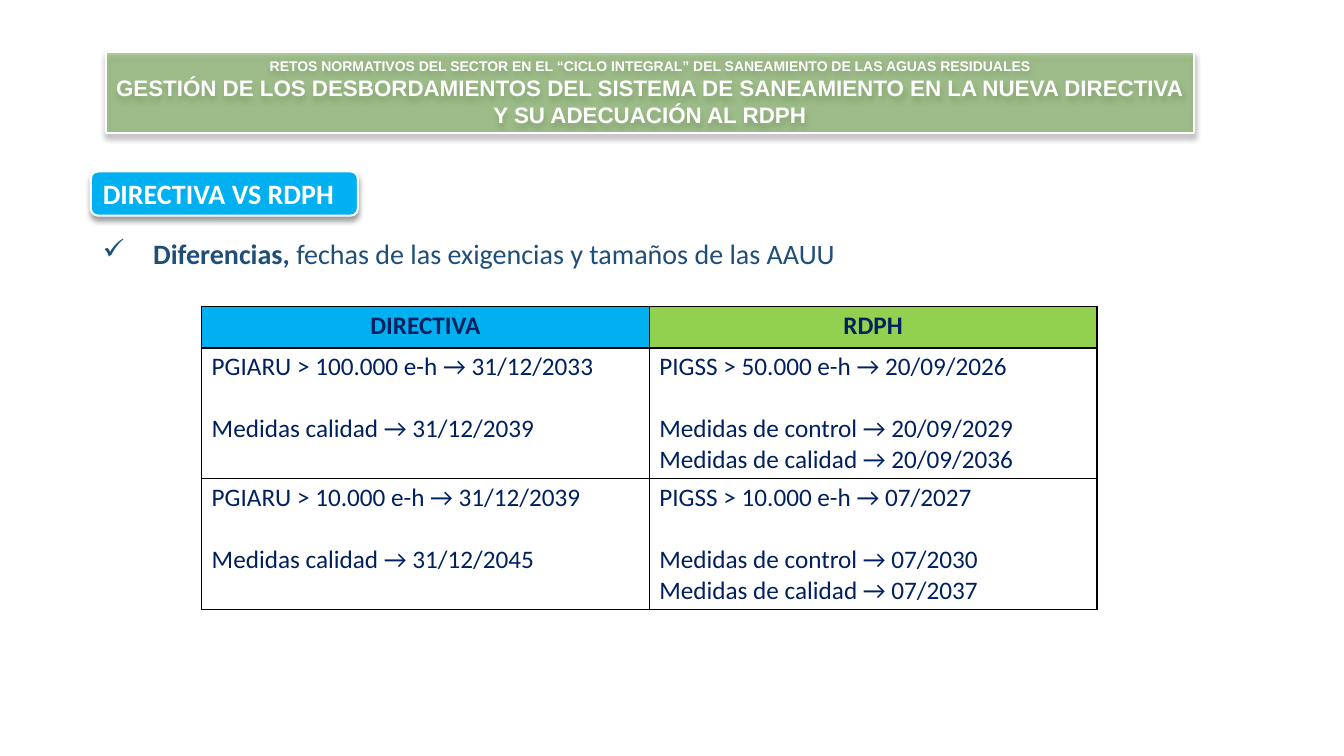
from lxml import etree
from pptx import Presentation
from pptx.dml.color import RGBColor
from pptx.enum.shapes import MSO_SHAPE as SHAPE
from pptx.enum.text import MSO_ANCHOR as ANCHOR, MSO_AUTO_SIZE as AUTO, PP_ALIGN as ALIGN
from pptx.oxml import parse_xml
from pptx.oxml.ns import nsdecls, qn
from pptx.util import Inches, Pt

WHITE = RGBColor(0xFF, 0xFF, 0xFF)
BLUE = RGBColor(0x00, 0xB0, 0xF0)
GREEN = RGBColor(0x70, 0xAD, 0x47)
LIME = RGBColor(0x92, 0xD0, 0x50)
STEEL = RGBColor(0x1F, 0x4E, 0x79)
NAVY = RGBColor(0x00, 0x20, 0x60)
LINE_GAP = Pt(22)  # one line of 18 pt text


class Deck:
    """Slide in progress with its shared style."""

    font = "Calibri"

    def __init__(self):
        self.prs = Presentation()
        self.prs.slide_width, self.prs.slide_height = Inches(13.33), Inches(7.5)
        self.s = self.prs.slides.add_slide(self.prs.slide_layouts[5])

    def run(self, p, text, size, color, bold=False, font=None):
        r = p.add_run()
        r.text = text
        r.font.name, r.font.size, r.font.bold = font or self.font, Pt(size), bold
        r.font.color.rgb = color

    def panel(self, sp, fill, alpha=100):
        """Fill, white outline and soft shadow of a rounded panel."""
        sp.fill.solid()
        sp.fill.fore_color.rgb = fill
        if alpha < 100:
            color = sp.element.spPr.find(qn("a:solidFill"))[0]
            etree.SubElement(color, qn("a:alpha"), val=str(alpha * 1000))
        sp.line.color.rgb, sp.line.width = WHITE, Pt(1.5)
        sp.shadow.inherit = False
        sp.element.spPr.find(qn("a:effectLst")).append(parse_xml(
            f'<a:outerShdw {nsdecls("a")} blurRad="{Pt(4)}" dist="{Pt(3)}" dir="5400000"'
            ' rotWithShape="0"><a:srgbClr val="000000"><a:alpha val="40000"/>'
            '</a:srgbClr></a:outerShdw>'))
        sp.text_frame.vertical_anchor = ANCHOR.MIDDLE

    def title(self, x, y, w, h, lines):
        sp = self.s.shapes.title
        sp.left, sp.top, sp.width, sp.height = map(Inches, (x, y, w, h))
        sp.element.spPr.insert(1, parse_xml(
            f'<a:prstGeom {nsdecls("a")} prst="roundRect"><a:avLst/></a:prstGeom>'))
        self.panel(sp, GREEN, 50)
        tf = sp.text_frame
        tf.word_wrap, tf.auto_size = True, AUTO.NONE
        for i, (text, size) in enumerate(lines):
            p = tf.add_paragraph() if i else tf.paragraphs[0]
            p.alignment = ALIGN.CENTER
            self.run(p, text, size, WHITE, True, "Arial")

    def label(self, x, y, w, h, text):
        sp = self.s.shapes.add_shape(SHAPE.ROUNDED_RECTANGLE, *map(Inches, (x, y, w, h)))
        self.panel(sp, BLUE)
        p = sp.text_frame.paragraphs[0]
        p.alignment = ALIGN.LEFT
        self.run(p, text, 20, WHITE, True)

    def bullet(self, x, y, w, h, runs):
        tf = self.s.shapes.add_textbox(*map(Inches, (x, y, w, h))).text_frame
        tf.word_wrap = True
        p = tf.paragraphs[0]
        pPr = p._p.get_or_add_pPr()
        pPr.set("marL", str(Inches(0.5)))
        pPr.set("indent", str(-Inches(0.5)))
        etree.SubElement(pPr, qn("a:buChar"), char="✓")
        for text, bold in runs:
            self.run(p, text, 20, STEEL, bold)

    def cell(self, cell, fill, lines, header=False):
        cell.fill.solid()
        cell.fill.fore_color.rgb = fill
        cell.margin_top = cell.margin_bottom = Inches(0.04)
        tf = cell.text_frame
        for i, text in enumerate(lines):
            p = tf.add_paragraph() if i else tf.paragraphs[0]
            p.alignment = ALIGN.CENTER if header else ALIGN.LEFT
            if i == 1:
                p.space_before = LINE_GAP
            self.run(p, text, 18, NAVY, header)
        # Borders come before the fill in the cell properties
        tcPr = cell._tc.get_or_add_tcPr()
        for i, side in enumerate(("lnL", "lnR", "lnT", "lnB")):
            width = Pt(2 if header and side == "lnB" else 1)
            tcPr.insert(i, parse_xml(
                f'<a:{side} {nsdecls("a")} w="{width}"><a:solidFill>'
                f'<a:srgbClr val="000000"/></a:solidFill></a:{side}>'))

    def table(self, x, y, w, heights, heads, rows):
        shape = self.s.shapes.add_table(
            len(heights), len(heads), *map(Inches, (x, y, w, sum(heights))))
        tbl = shape.table
        for row, height in zip(tbl.rows, heights):
            row.height = Inches(height)
        for c, (text, fill) in enumerate(heads):
            self.cell(tbl.cell(0, c), fill, [text], header=True)
        for r, row in enumerate(rows, 1):
            for c, lines in enumerate(row):
                self.cell(tbl.cell(r, c), WHITE, lines)


def main():
    deck = Deck()

    # Title banner
    deck.title(1.05, 0.52, 10.79, 0.8, [
        ("RETOS NORMATIVOS DEL SECTOR EN EL “CICLO INTEGRAL” DEL SANEAMIENTO "
         "DE LAS AGUAS RESIDUALES", 10),
        ("GESTIÓN DE LOS DESBORDAMIENTOS DEL SISTEMA DE SANEAMIENTO EN LA NUEVA "
         "DIRECTIVA Y SU ADECUACIÓN AL RDPH", 16),
    ])

    # Section label and lead sentence
    deck.label(0.9, 1.7, 2.65, 0.44, "DIRECTIVA VS RDPH")
    deck.bullet(0.92, 2.3, 11.52, 0.74, [
        ("Diferencias, ", True),
        ("fechas de las exigencias y tamaños de las AAUU", False),
    ])

    # Comparison of deadlines
    deck.table(2, 3.04, 8.88, [0.41, 1.3, 1.3], [("DIRECTIVA", BLUE), ("RDPH", LIME)], [
        [["PGIARU > 100.000 e-h → 31/12/2033", "Medidas calidad → 31/12/2039"],
         ["PIGSS > 50.000 e-h → 20/09/2026", "Medidas de control → 20/09/2029",
          "Medidas de calidad → 20/09/2036"]],
        [["PGIARU > 10.000 e-h → 31/12/2039", "Medidas calidad → 31/12/2045"],
         ["PIGSS > 10.000 e-h → 07/2027", "Medidas de control → 07/2030",
          "Medidas de calidad → 07/2037"]],
    ])

    deck.prs.save("out.pptx")


if __name__ == "__main__":
    main()
